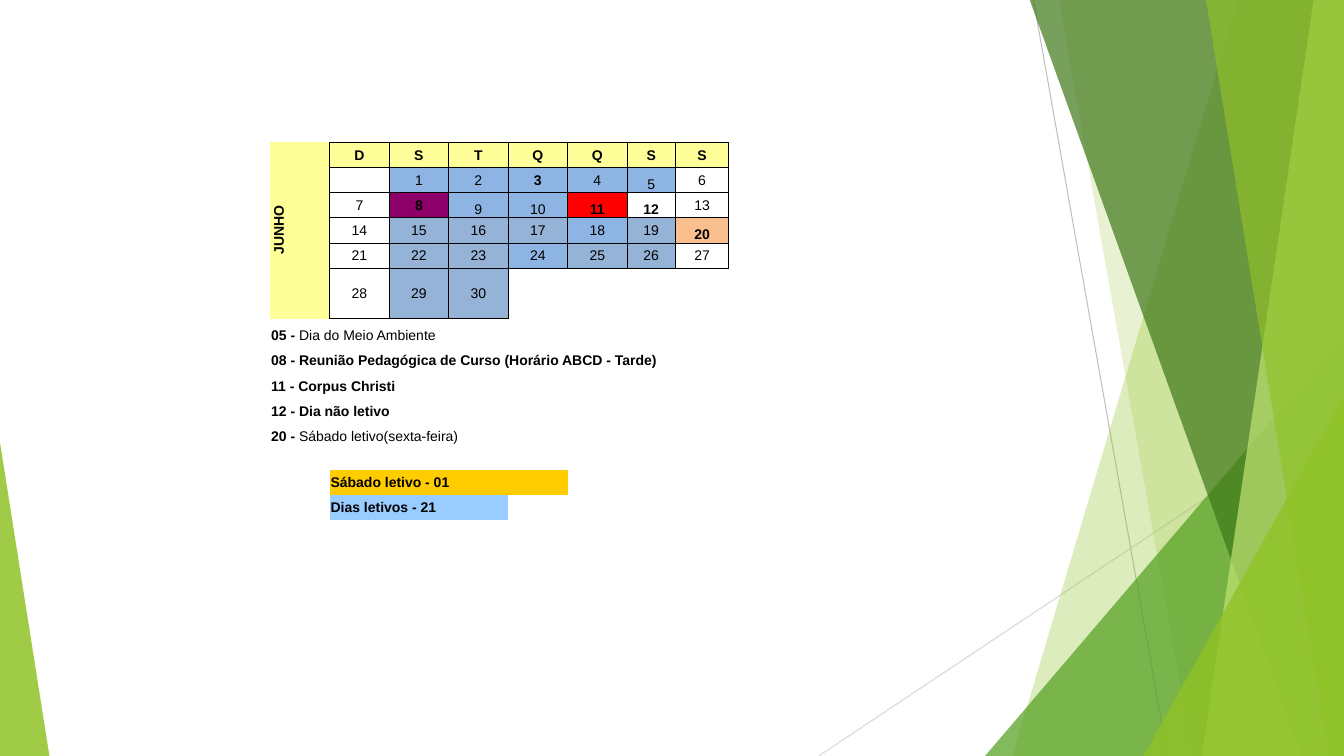
from lxml.etree import SubElement
from pptx import Presentation
from pptx.dml.color import RGBColor
from pptx.enum.shapes import MSO_CONNECTOR, MSO_SHAPE
from pptx.enum.text import MSO_ANCHOR, PP_ALIGN
from pptx.oxml.ns import qn
from pptx.util import Inches, Pt

BLACK = RGBColor(0x00, 0x00, 0x00)
WHITE = RGBColor(0xFF, 0xFF, 0xFF)
CREAM = RGBColor(0xFF, 0xFF, 0x99)
BLUE = RGBColor(0x8D, 0xB4, 0xE2)
STEEL = RGBColor(0x95, 0xB3, 0xD7)
PLUM = RGBColor(0x8E, 0x00, 0x69)
RED = RGBColor(0xFF, 0x00, 0x00)
PEACH = RGBColor(0xFA, 0xBF, 0x8F)
GOLD = RGBColor(0xFF, 0xCC, 0x00)
SKY = RGBColor(0x99, 0xCC, 0xFF)
LIME = RGBColor(0x90, 0xC2, 0x26)
GREEN = RGBColor(0x54, 0xA0, 0x21)
DARK = RGBColor(0x3F, 0x78, 0x19)
PALE = RGBColor(0xC0, 0xE4, 0x74)
GREY = RGBColor(0xBF, 0xBF, 0xBF)
MIST = RGBColor(0xD9, 0xD9, 0xD9)

WIDE, HIGH, TOP = 13.33, 7.5, -0.01
NO_STYLE = "{2D5ABB26-0587-4C30-8999-92F81FD0307C}"


def fill_cell(cell, parts, color=None, align=PP_ALIGN.CENTER, anchor=MSO_ANCHOR.MIDDLE):
    """Write (text, bold) parts into a cell and paint it."""
    cell.vertical_anchor = anchor
    para = cell.text_frame.paragraphs[0]
    para.alignment = align
    for text, bold in parts:
        run = para.add_run()
        run.text = text
        run.font.name = "Arial"
        run.font.size = Pt(10)
        run.font.bold = bold
        run.font.color.rgb = BLACK
    if color is not None:
        cell.fill.solid()
        cell.fill.fore_color.rgb = color


def draw_edges(cell, sides):
    """Draw thin black borders on the named sides, in the order L, R, T, B."""
    props = cell._tc.get_or_add_tcPr()
    for spot, side in enumerate(sides):
        edge = props.makeelement(qn("a:ln" + side), {"w": "6350"})
        paint = SubElement(edge, qn("a:solidFill"))
        SubElement(paint, qn("a:srgbClr"), val=str(BLACK))
        props.insert(spot, edge)


prs = Presentation()
prs.slide_width = Inches(WIDE)
prs.slide_height = Inches(HIGH)
slide = prs.slides.add_slide(prs.slide_layouts[6])
shapes = slide.shapes

# Thin lines behind the green facets
for x1, y1, x2, y2, color in [
    (10.25, 0, 11.58, HIGH, GREY),
    (WIDE, 4.03, 8.12, HIGH, MIST),
]:
    line = shapes.add_connector(
        MSO_CONNECTOR.STRAIGHT, Inches(x1), Inches(y1), Inches(x2), Inches(y2))
    line.line.color.rgb = color
    line.line.width = Pt(0.75)
    SubElement(line._element.spPr, qn("a:effectLst"))

# Facets: a pair is the top and bottom x of a slanted left edge,
# a longer tuple is left, top, width and apex of a triangle
for place, color, alpha in [
    ((12.28, 10.04), LIME, 30),
    ((10.5, 11.83), LIME, 20),
    ((9.77, 3.33, 3.56, 1), GREEN, 72),
    ((10.21, 12.91), DARK, 70),
    ((13.03, 11.92), PALE, 70),
    ((11.96, 13.18), LIME, 65),
    ((11.34, 3.93, 1.99, 1), LIME, 80),
    ((0, 4.39, 0.49, 0), LIME, 85),
]:
    if len(place) == 2:
        upper, lower = place
        path = shapes.build_freeform(Inches(upper), Inches(TOP))
        path.add_line_segments([
            (Inches(x), Inches(y))
            for x, y in [(WIDE, TOP), (WIDE, HIGH), (lower, HIGH)]])
        facet = path.convert_to_shape()
    else:
        left, top, width, apex = place
        facet = shapes.add_shape(
            MSO_SHAPE.ISOSCELES_TRIANGLE, Inches(left), Inches(top),
            Inches(width), Inches(HIGH - top))
        facet.adjustments[0] = apex
    facet.shadow.inherit = False
    facet.line.fill.background()
    facet.fill.solid()
    facet.fill.fore_color.rgb = color
    tint = facet.fill._xPr.find(qn("a:solidFill"))[0]
    SubElement(tint, qn("a:alpha"), val=str(alpha * 1000))

# Calendar table
widths = [0.59] * 6 + [0.48, 0.53, 0.34, 0.49, 0.34, 0.53]
heights = [0.25] * 5 + [0.5] + [0.25] * 8
table = shapes.add_table(
    len(heights), len(widths), Inches(2.68), Inches(1.41),
    Inches(sum(widths)), Inches(sum(heights))).table
table.first_row = table.horz_banding = False
table._tbl.tblPr.find(qn("a:tableStyleId")).text = NO_STYLE
for col, width in zip(table.columns, widths):
    col.width = Inches(width)
for row, height in zip(table.rows, heights):
    row.height = Inches(height)
for cell in table.iter_cells():
    cell.margin_left = cell.margin_right = cell.margin_top = Inches(0.01)
    cell.margin_bottom = 0
    cell.fill.background()
    SubElement(cell.text_frame.paragraphs[0]._p, qn("a:endParaRPr"), sz="1000")

month = table.cell(0, 0)
month.merge(table.cell(5, 0))
fill_cell(month, [("JUNHO", True)], CREAM)
month._tc.get_or_add_tcPr().set("vert", "vert270")
draw_edges(month, "R")

for col, name in enumerate("DSTQQSS", 1):
    fill_cell(table.cell(0, col), [(name, True)], CREAM)
    draw_edges(table.cell(0, col), "LRTB")

# The first of the month is a Monday, so slot 0 stays empty
paint = {8: PLUM, 11: RED, 20: PEACH}
paint.update(dict.fromkeys([1, 2, 3, 4, 5, 9, 10, 18, 24], BLUE))
paint.update(dict.fromkeys([15, 16, 17, 19, 22, 23, 25, 26, 29, 30], STEEL))
strong = {3, 8, 11, 12, 20}
low = {5, 9, 10, 11, 12, 20}
for day in range(31):
    cell = table.cell(1 + day // 7, 1 + day % 7)
    if day:
        anchor = MSO_ANCHOR.BOTTOM if day in low else MSO_ANCHOR.MIDDLE
        fill_cell(cell, [(str(day), day in strong)], paint.get(day, WHITE), anchor=anchor)
    draw_edges(cell, "LRTB" if day < 28 else "LRT")

# Notes and totals: row, first column, span, parts, colour
for row, col, span, parts, color in [
    (6, 0, 5, [("05 -", True), (" Dia do Meio Ambiente", False)], None),
    (7, 0, 12, [("08 - Reunião Pedagógica de Curso (Horário ABCD - Tarde)", True)], None),
    (8, 0, 4, [("11 - Corpus Christi", True)], None),
    (9, 0, 4, [("12 - Dia não letivo", True)], None),
    (10, 0, 5, [("20 - ", True), ("Sábado letivo(sexta-feira)", False)], None),
    (12, 1, 4, [("Sábado letivo - 01", True)], GOLD),
    (13, 1, 3, [("Dias letivos - 21", True)], SKY),
]:
    cell = table.cell(row, col)
    cell.merge(table.cell(row, col + span - 1))
    anchor = MSO_ANCHOR.MIDDLE if color else MSO_ANCHOR.BOTTOM
    fill_cell(cell, parts, color, PP_ALIGN.LEFT, anchor)

prs.save("out.pptx")
